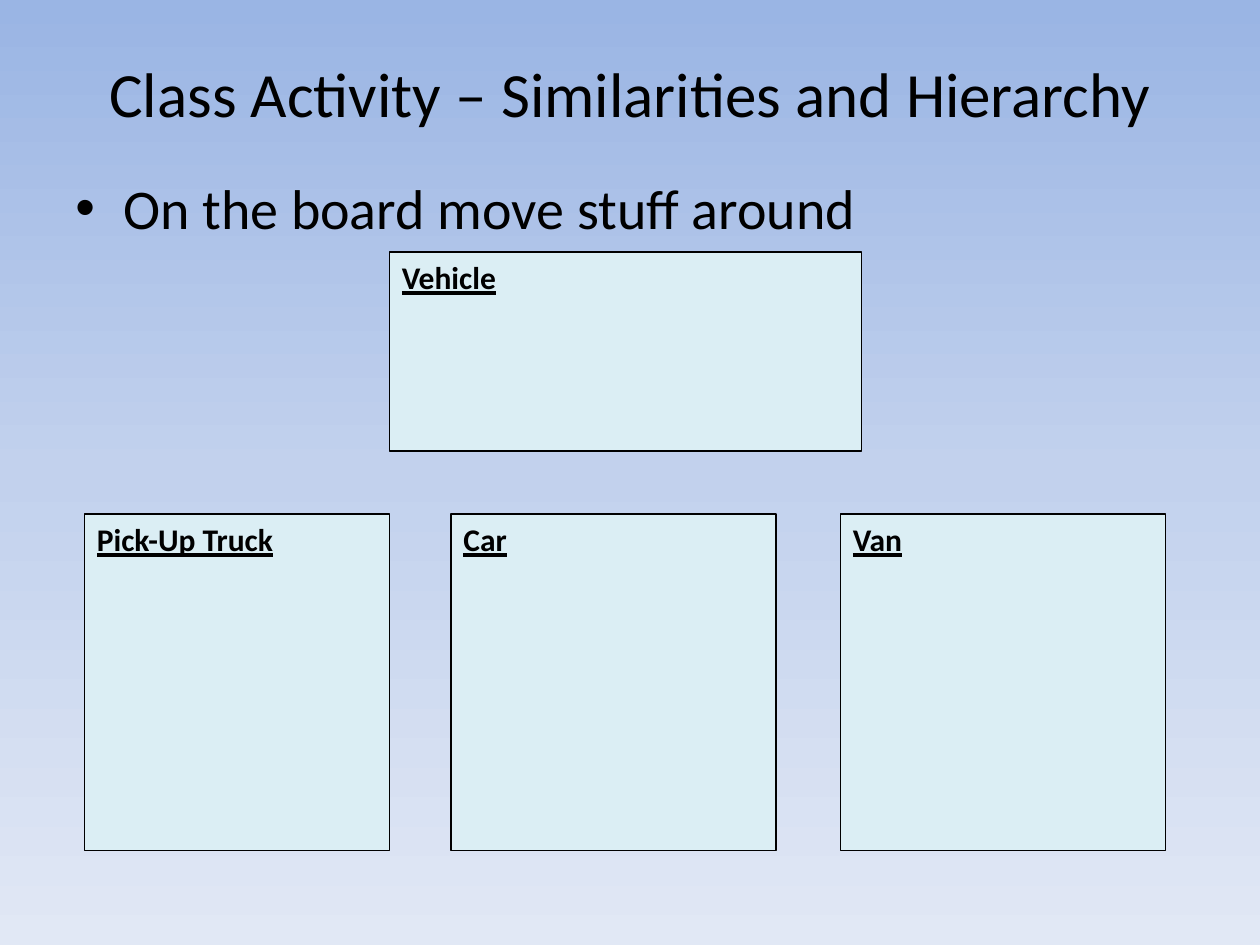
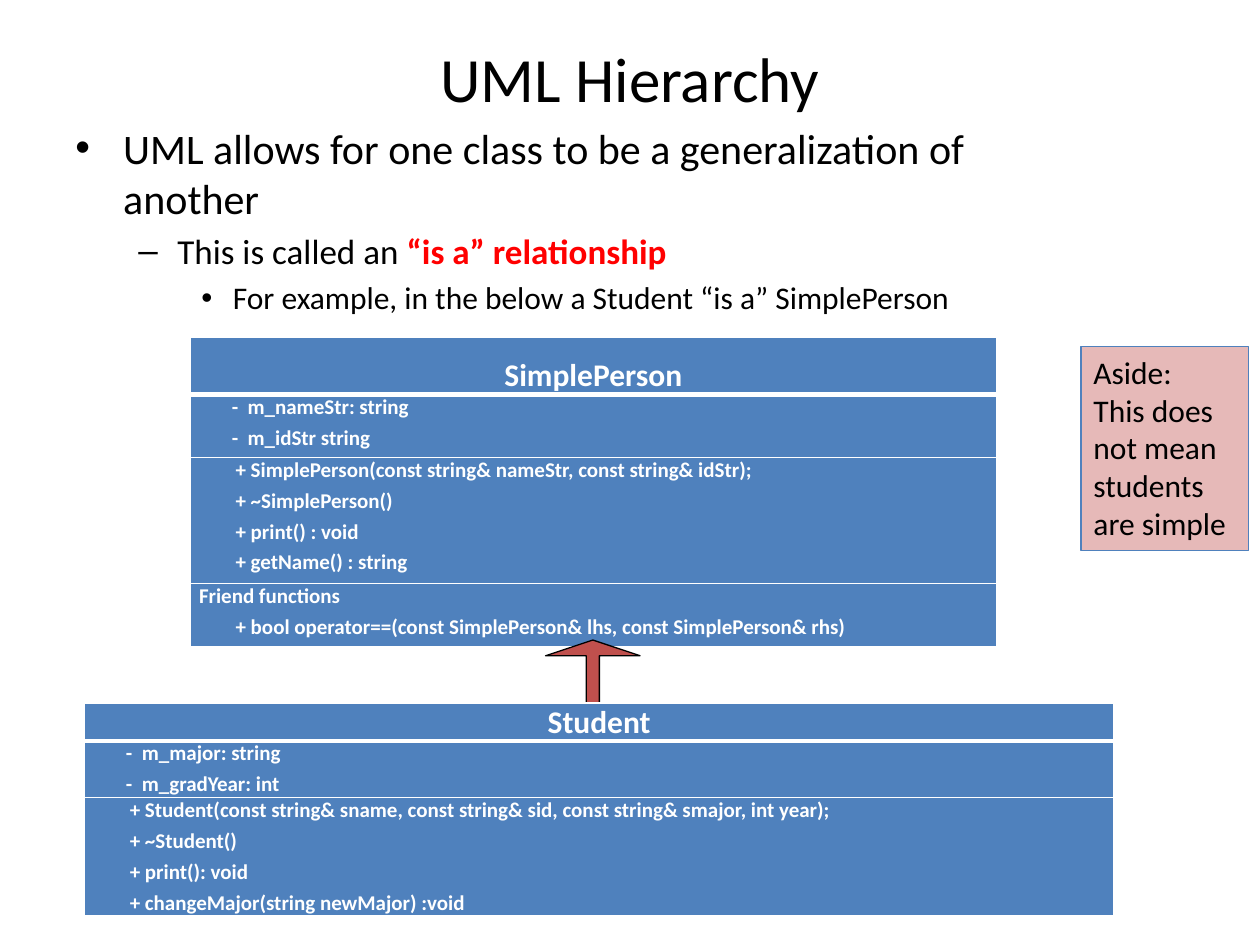
from copy import deepcopy

from lxml import etree
from pptx import Presentation
from pptx.dml.color import RGBColor
from pptx.enum import shapes, text
from pptx.oxml.ns import qn
from pptx.util import Inches, Pt

FONT = "Calibri"
BLACK = RGBColor(0x00, 0x00, 0x00)
WHITE = RGBColor(0xFF, 0xFF, 0xFF)
RED = RGBColor(0xFF, 0x00, 0x00)
BLUE = RGBColor(0x4F, 0x81, 0xBD)
BRICK = RGBColor(0xC0, 0x50, 0x4D)
PALE_CYAN = RGBColor(0xDB, 0xEE, 0xF4)
PINK = RGBColor(0xE6, 0xB9, 0xB8)
SKY_STOPS = [
    (0, RGBColor(0x9A, 0xB5, 0xE4)),
    (0.5, RGBColor(0xC2, 0xD1, 0xED)),
    (1, RGBColor(0xE1, 0xE8, 0xF5)),
]
# Bullet level: character, left margin, hanging indent
BULLETS = [("•", 0.38, 0.38), ("–", 0.81, 0.31), ("•", 1.25, 0.25)]


def style_runs(paragraph, size, color=BLACK, bold=False):
    for run in paragraph.runs:
        run.font.name = FONT
        run.font.size = Pt(size)
        run.font.bold = bold
        run.font.color.rgb = color


def add_filled_shape(slide, preset, box, fill, line=BLACK):
    """Add a flat shape with a thin outline and text at its top left."""
    shape = slide.shapes.add_shape(preset, *map(Inches, box))
    shape.shadow.inherit = False
    shape.fill.solid()
    shape.fill.fore_color.rgb = fill
    shape.line.color.rgb = line
    shape.line.width = Pt(0.75)
    shape.text_frame.vertical_anchor = text.MSO_ANCHOR.TOP
    return shape


presentation = Presentation()
presentation.slide_width = Inches(10)
presentation.slide_height = Inches(7.5)

# Titles and bulleted text: each bullet is its size and its pieces of text
outlines = [
    ("Class Activity – Similarities and Hierarchy", (0.5, 0.3, 9, 0.87),
     (0.5, 1.33, 9, 5.67), [(32, ["On the board move stuff around"])]),
    ("UML Hierarchy", (0.5, 0.3, 9, 0.62), (0.5, 0.92, 8.33, 1.67), [
        (24, ["UML allows for one class to be a generalization of another"]),
        (20, ["This is called an ", "“is a” relationship"]),
        (18, ["For example, in the below a Student “is a” SimplePerson"]),
    ]),
]
for title, title_box, body_box, bullets in outlines:
    slide = presentation.slides.add_slide(presentation.slide_layouts[6])
    frame = slide.shapes.add_textbox(*map(Inches, title_box)).text_frame
    frame.word_wrap = True
    frame.vertical_anchor = text.MSO_ANCHOR.MIDDLE
    frame.text = title
    frame.paragraphs[0].alignment = text.PP_ALIGN.CENTER
    style_runs(frame.paragraphs[0], 36)

    frame = slide.shapes.add_textbox(*map(Inches, body_box)).text_frame
    frame.word_wrap = True
    for level, (size, pieces) in enumerate(bullets):
        paragraph = frame.add_paragraph() if level else frame.paragraphs[0]
        paragraph.level = level
        paragraph.space_before = Pt(0.2 * size)
        for piece in pieces:
            paragraph.add_run().text = piece
        style_runs(paragraph, size)
        for run in paragraph.runs[1:]:
            run.font.bold = True
            run.font.color.rgb = RED
        character, margin, hanging = BULLETS[level]
        properties = paragraph._p.get_or_add_pPr()
        properties.set("marL", str(Inches(margin)))
        properties.set("indent", str(-Inches(hanging)))
        etree.SubElement(properties, qn("a:buFont")).set("typeface", "Arial")
        etree.SubElement(properties, qn("a:buChar")).set("char", character)

activity_slide, uml_slide = presentation.slides

# Class activity: gradient background and boxes to fill in
background = activity_slide.background.fill
background.gradient()
background.gradient_angle = 270
stop_list = activity_slide.element.find(".//" + qn("a:gsLst"))
stop_list.insert(1, deepcopy(stop_list[0]))
for stop, (position, color) in zip(background.gradient_stops, SKY_STOPS):
    stop.position = position
    stop.color.rgb = color

for name, box in [
    ("Pick-Up Truck", (0.67, 4.08, 2.42, 2.67)),
    ("Car", (3.58, 4.08, 2.58, 2.67)),
    ("Vehicle", (3.09, 2, 3.75, 1.58)),
    ("Van", (6.67, 4.08, 2.58, 2.67)),
]:
    shape = add_filled_shape(activity_slide, shapes.MSO_SHAPE.RECTANGLE, box, PALE_CYAN)
    shape.text_frame.text = name
    paragraph = shape.text_frame.paragraphs[0]
    paragraph.alignment = text.PP_ALIGN.LEFT
    style_runs(paragraph, 18, bold=True)
    paragraph.runs[0].font.underline = True

# UML classes: name, position, width, name line spacing, rows of (height, lines)
uml_slide.background.fill.solid()
uml_slide.background.fill.fore_color.rgb = WHITE
MEMBER_INDENTS = {"-": 0.26, "+": 0.29}
uml_classes = [
    (1.51, 2.68, 6.4, 1.5, [
        (0.45, ["SimplePerson"]),
        (0.5, ["-  m_nameStr: string", "-  m_idStr string"]),
        (1, ["+ SimplePerson(const string& nameStr, const string& idStr);",
             "+ ~SimplePerson()", "+ print() : void", "+ getName() : string"]),
        (0.5, ["Friend functions",
               "+ bool operator==(const SimplePerson& lhs, const SimplePerson& rhs)"]),
    ]),
    (0.67, 5.58, 8.17, 1, [
        (0.3, ["Student"]),
        (0.45, ["-  m_major: string", "-  m_gradYear: int"]),
        (0.94, ["+ Student(const string& sname, const string& sid, const string& smajor, int year);",
                "+ ~Student()", "+ print(): void", "+ changeMajor(string newMajor) :void"]),
    ]),
]
for left, top, width, name_spacing, rows in uml_classes:
    height = sum(row_height for row_height, lines in rows)
    table = uml_slide.shapes.add_table(
        len(rows), 1, *map(Inches, (left, top, width, height))).table
    table.horz_banding = False
    for index, (row_height, lines) in enumerate(rows):
        table.rows[index].height = Inches(row_height)
        cell = table.cell(index, 0)
        cell.margin_left = cell.margin_right = Inches(0.07)
        cell.margin_top = cell.margin_bottom = 0
        cell_properties = cell._tc.get_or_add_tcPr()
        for side in "LRTB":
            thick = (side == "B" and index == 0) or (side == "T" and index == 1)
            border = etree.SubElement(cell_properties, qn("a:ln" + side))
            border.set("w", str(Pt(3 if thick else 1)))
            border_fill = etree.SubElement(border, qn("a:solidFill"))
            etree.SubElement(border_fill, qn("a:srgbClr")).set("val", str(WHITE))
        cell.fill.solid()
        cell.fill.fore_color.rgb = BLUE
        cell.text_frame.text = "\n".join(lines)
        for paragraph in cell.text_frame.paragraphs:
            if index == 0:
                paragraph.alignment = text.PP_ALIGN.CENTER
                paragraph.line_spacing = float(name_spacing)
            else:
                paragraph.space_after = Pt(3)
                indent = MEMBER_INDENTS.get(paragraph.text[0], 0)
                paragraph._p.get_or_add_pPr().set("marL", str(Inches(indent)))
            style_runs(paragraph, 12 if index else 18, WHITE, bold=True)

    if left == uml_classes[0][0]:
        arrow = add_filled_shape(
            uml_slide, shapes.MSO_SHAPE.UP_ARROW, (4.33, 5.08, 0.75, 0.5), BRICK)
        arrow.adjustments[0] = 0.14
        arrow.adjustments[1] = 0.25

aside = add_filled_shape(
    uml_slide, shapes.MSO_SHAPE.RECTANGLE, (8.58, 2.75, 1.33, 1.62), PINK, BLUE)
aside.text_frame.text = "Aside:\nThis does not mean students are simple"
for paragraph in aside.text_frame.paragraphs:
    paragraph.alignment = text.PP_ALIGN.LEFT
    style_runs(paragraph, 18)

presentation.save("out.pptx")
